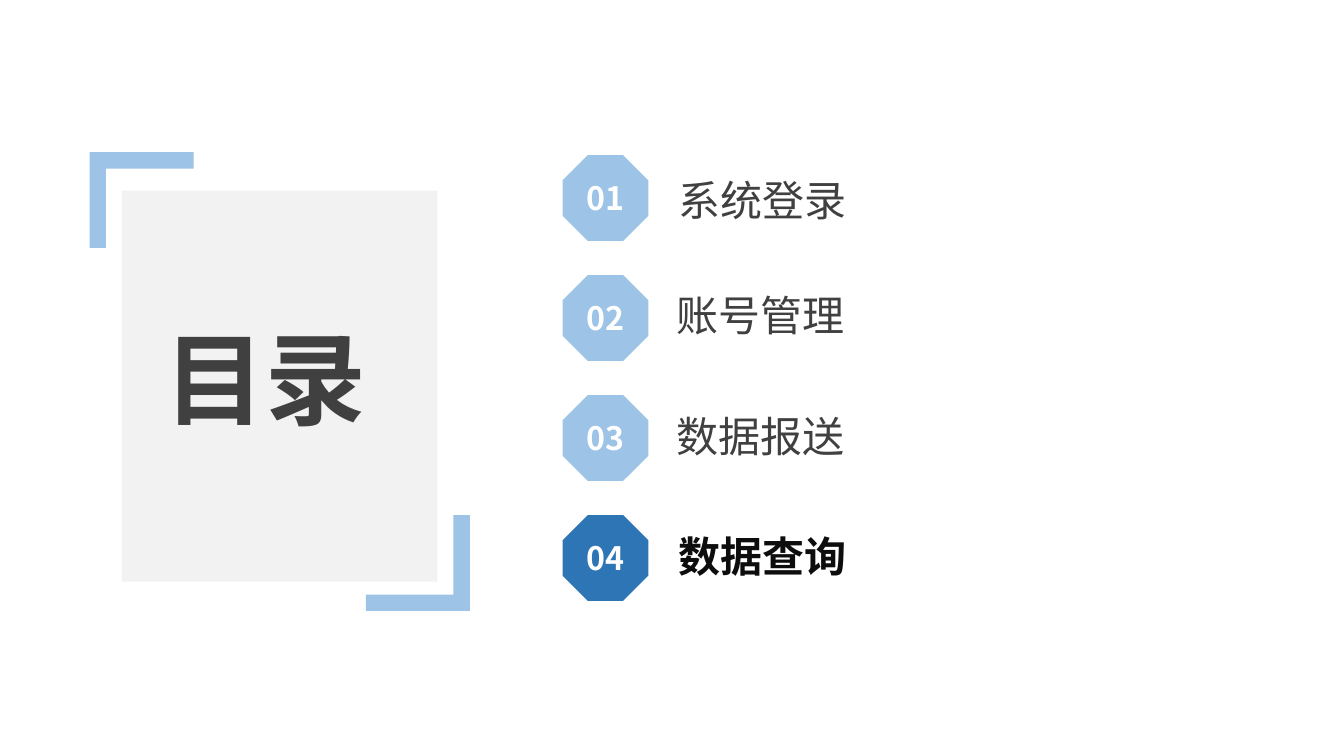
from dataclasses import dataclass
from lxml.etree import SubElement
from pptx import Presentation
from pptx.dml.color import RGBColor
from pptx.enum.shapes import MSO_SHAPE
from pptx.enum.text import MSO_ANCHOR, PP_ALIGN
from pptx.oxml.ns import qn
from pptx.util import Inches, Pt

# Content
TITLE = "目录"
ITEMS = [  # label, left, top, current section
    ("系统登录", 6.63, 1.68, False),
    ("账号管理", 6.61, 2.82, False),
    ("数据报送", 6.61, 4.02, False),
    ("数据查询", 6.63, 5.21, True),
]


@dataclass(frozen=True)
class Theme:
    face: str = "Noto Sans CJK SC"
    pale: str = "9DC3E6"
    deep: str = "2E75B6"
    panel: str = "F2F2F2"
    text: str = "404040"
    dark: str = "0D0D0D"
    white: str = "FFFFFF"
    title: int = 72
    label: int = 30
    number: int = 23


LOOK = Theme()

# Layout in inches
WIDE, HIGH = 13.33, 7.5
PANEL = (1.21, 1.89, 3.13, 3.88)
CORNERS = [(0.89, 1.51, 180), (3.63, 5.11, 0)]
BADGE, LEFT, TOP, PITCH = 0.85, 5.58, 1.54, 1.19


def write(shape, text, size, color, bold=False, align=PP_ALIGN.LEFT,
          anchor=MSO_ANCHOR.TOP):
    frame = shape.text_frame
    frame.word_wrap = True
    frame.vertical_anchor = anchor
    para = frame.paragraphs[0]
    para.alignment = align
    run = para.add_run()
    run.text = text
    font = run.font
    font.size, font.bold, font.name = Pt(size), bold, LOOK.face
    font.color.rgb = RGBColor.from_string(color)
    SubElement(font._element, qn("a:ea"), typeface=LOOK.face)


def draw(shapes, kind, box, color):
    shape = shapes.add_shape(kind, *map(Inches, box))
    shape.shadow.inherit = False
    shape.fill.solid()
    shape.fill.fore_color.rgb = RGBColor.from_string(color)
    shape.line.fill.background()
    return shape


def main():
    deck = Presentation()
    deck.slide_width, deck.slide_height = Inches(WIDE), Inches(HIGH)
    slide = deck.slides.add_slide(deck.slide_layouts[5])
    shapes = slide.shapes

    # Panel with two corner brackets
    for left, top, turn in CORNERS:
        mark = draw(shapes, MSO_SHAPE.CORNER, (left, top, 1.03, 0.95), LOOK.pale)
        mark.adjustments[0], mark.adjustments[1] = 0.17, 0.17
        mark.rotation = turn
        mark._element.spPr.find(qn("a:xfrm")).set("flipH", "1")
    draw(shapes, MSO_SHAPE.RECTANGLE, PANEL, LOOK.panel)

    # Title, brought in front of the panel
    title = shapes.title
    title.left, title.top = Inches(1.53), Inches(3.09)
    title.width, title.height = Inches(2.48), Inches(1.31)
    write(title, TITLE, LOOK.title, LOOK.text, bold=True, align=PP_ALIGN.JUSTIFY)
    shapes._spTree.append(title._element)

    # Numbered sections
    for row, (label, left, top, now) in enumerate(ITEMS):
        box = (LEFT, TOP + row * PITCH, BADGE, BADGE)
        badge = draw(shapes, MSO_SHAPE.OCTAGON, box, LOOK.deep if now else LOOK.pale)
        write(badge, f"{row + 1:02}", LOOK.number, LOOK.white, bold=True,
              align=PP_ALIGN.CENTER, anchor=MSO_ANCHOR.MIDDLE)
        name = shapes.add_textbox(*map(Inches, (left, top, 6.07, 0.6)))
        write(name, label, LOOK.label, LOOK.dark if now else LOOK.text, bold=now)

    deck.save("out.pptx")


if __name__ == "__main__":
    main()
